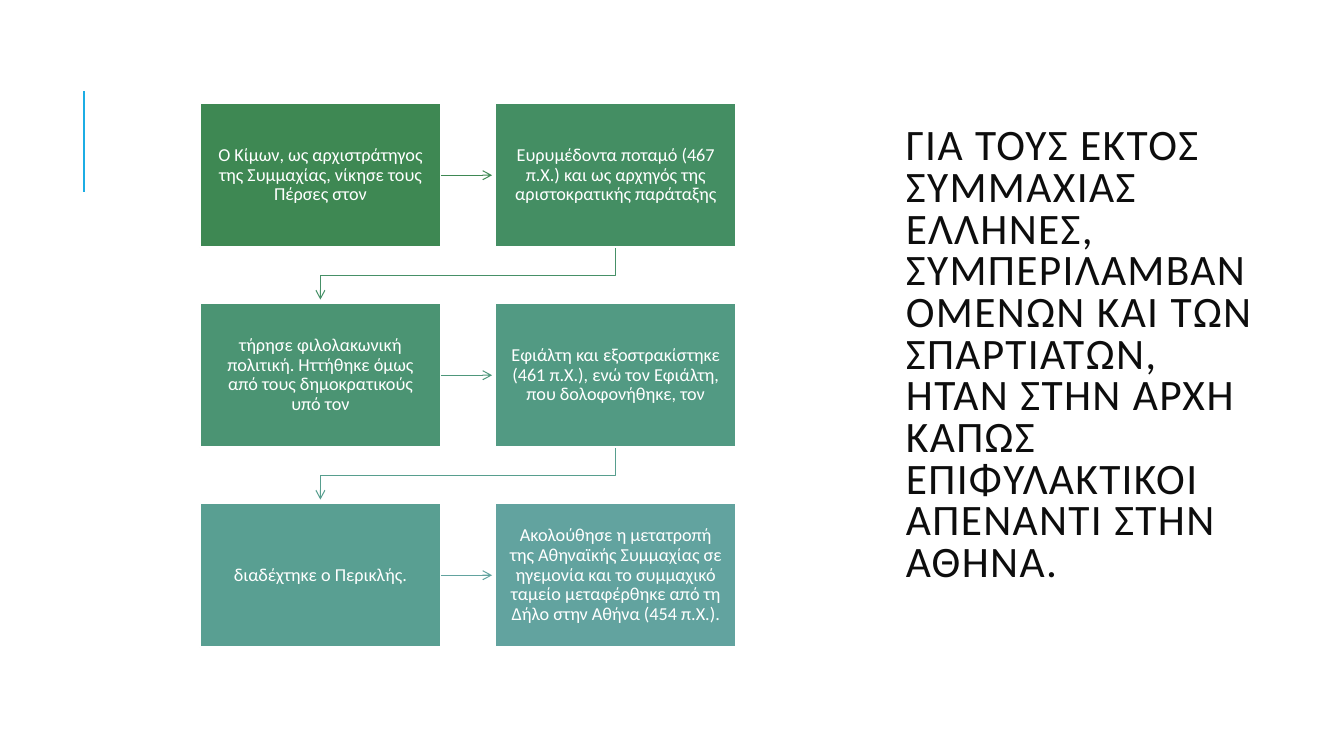
from lxml import etree
from pptx import Presentation
from pptx.dml.color import RGBColor
from pptx.enum.shapes import MSO_CONNECTOR, MSO_SHAPE
from pptx.enum.text import MSO_ANCHOR, MSO_AUTO_SIZE, PP_ALIGN
from pptx.oxml.ns import qn
from pptx.util import Cm, Pt

STRAIGHT = MSO_CONNECTOR.STRAIGHT
RECTANGLE = MSO_SHAPE.RECTANGLE
MIDDLE = MSO_ANCHOR.MIDDLE
NO_FIT = MSO_AUTO_SIZE.NONE
LEFT, CENTER = PP_ALIGN.LEFT, PP_ALIGN.CENTER
RIGHT_SIDE = 3

TITLE = (
    "ΓΙΑ ΤΟΥΣ ΕΚΤΌΣ ΣΥΜΜΑΧΊΑΣ ΈΛΛΗΝΕΣ, ΣΥΜΠΕΡΙΛΑΜΒΑΝΟΜΈΝΩΝ ΚΑΙ ΤΩΝ\v"
    "ΣΠΑΡΤΙΑΤΏΝ, ΉΤΑΝ ΣΤΗΝ ΑΡΧΉ ΚΆΠΩΣ ΕΠΙΦΥΛΑΚΤΙΚΟΊ ΑΠΈΝΑΝΤΙ ΣΤΗΝ ΑΘΉΝΑ."
)
# Each step: text, fill, colour of the arrow to the next step
STEPS = [
    ("Ο Κίμων, ως αρχιστράτηγος της Συμμαχίας, νίκησε τους Πέρσες στον",
     "3E8853", "3E8853"),
    ("Ευρυμέδοντα ποταμό (467 π.Χ.) και ως αρχηγός της αριστοκρατικής παράταξης",
     "448E63", "469067"),
    ("τήρησε φιλολακωνική πολιτική. Ηττήθηκε όμως από τους δημοκρατικούς υπό τον",
     "4B9473", "4E977B"),
    ("Εφιάλτη και εξοστρακίστηκε (461 π.Χ.), ενώ τον Εφιάλτη, που δολοφονήθηκε, τον",
     "529A83", "579E8E"),
    ("διαδέχτηκε ο Περικλής.", "599F92", "62A39F"),
    ("Ακολούθησε η μετατροπή της Αθηναϊκής Συμμαχίας σε ηγεμονία και το "
     "συμμαχικό ταμείο μεταφέρθηκε από τη Δήλο στην Αθήνα (454 π.Χ.).",
     "62A39F", None),
]


def color(value):
    return RGBColor.from_string(value)


def apply_format(target, values):
    for name, value in values.items():
        setattr(target, name, value)


def style_line(shape, value, width, arrow=False):
    shape.line.color.rgb = color(value)
    shape.line.width = Pt(width)
    if arrow:
        etree.SubElement(shape.line._get_or_add_ln(), qn("a:tailEnd"), type="arrow")


def add_straight(page, start, end, value, width, arrow=False):
    connector = page.shapes.add_connector(STRAIGHT, *start, *end)
    style_line(connector, value, width, arrow)
    etree.SubElement(connector._element.spPr, qn("a:effectLst"))
    return connector


def format_text(frame, frame_values, para_values, size, value):
    apply_format(frame, {"word_wrap": True, "auto_size": NO_FIT,
                         "vertical_anchor": MIDDLE, **frame_values})
    para = frame.paragraphs[0]
    apply_format(para, para_values)
    for span in para.runs:
        apply_format(span.font, {"name": "Calibri", "size": Pt(size)})
        span.font.color.rgb = color(value)
    return para


def add_title(page, left, top, width, height):
    title = page.shapes.title
    apply_format(title, {"left": left, "top": top, "width": width, "height": height})
    title.text_frame.text = TITLE
    # The deeper bottom margin lifts the centred text by half a line
    margins = {"margin_left": Cm(0.25), "margin_right": Cm(0.25),
               "margin_top": Cm(0.13), "margin_bottom": Cm(1.18)}
    para = format_text(title.text_frame, margins,
                       {"alignment": LEFT, "line_spacing": 0.8}, 31, "0D0D0D")
    for span in para.runs:
        apply_format(span.font, {"bold": False})
        properties = span.font._element
        for name, value in {"lang": "el-GR", "cap": "all", "spc": "100"}.items():
            properties.set(name, value)


def add_step(page, left, top, width, height, text, fill):
    box = page.shapes.add_shape(RECTANGLE, left, top, width, height)
    box.shadow.inherit = False
    box.fill.solid()
    box.fill.fore_color.rgb = color(fill)
    style_line(box, "FFFFFF", 1.25)
    box.text_frame.text = text
    margins = {f"margin_{side}": Cm(0.3) for side in ("left", "top", "right", "bottom")}
    format_text(box.text_frame, margins,
                {"alignment": CENTER, "line_spacing": 0.9}, 13, "FFFFFF")
    return box


def add_elbow(page, box, following, value):
    # Down from one row, across, and down into the next row
    start_x = box.left + box.width // 2
    end_x = following.left + following.width // 2
    start_y = box.top + box.height + Cm(0.03)
    middle_y = (box.top + box.height + following.top) // 2
    builder = page.shapes.build_freeform(start_x, start_y)
    builder.add_line_segments(
        [(start_x, middle_y), (end_x, middle_y), (end_x, following.top - Cm(0.09))],
        close=False)
    elbow = builder.convert_to_shape()
    elbow.shadow.inherit = False
    elbow.fill.background()
    style_line(elbow, value, 0.75, arrow=True)


def add_flow(page, left, top, width, height):
    box_width, box_height = Cm(6.07), Cm(3.63)
    step_x, step_y = width - box_width, (height - box_height) // 2
    boxes = []
    for index, (text, fill, _) in enumerate(STEPS):
        row, column = divmod(index, 2)
        boxes.append(add_step(page, left + column * step_x, top + row * step_y,
                              box_width, box_height, text, fill))
    # Arrows from each step to the next
    for index, (box, following) in enumerate(zip(boxes, boxes[1:])):
        value = STEPS[index][2]
        if index % 2:
            add_elbow(page, box, following, value)
        else:
            y = box.top + box.height // 2
            arrow = add_straight(page, (box.left + box.width, y),
                                 (following.left - Cm(0.08), y), value, 0.75, True)
            arrow.begin_connect(box, RIGHT_SIDE)


def main():
    deck = Presentation()
    apply_format(deck, {"slide_width": Cm(33.87), "slide_height": Cm(19.05)})
    page = deck.slides.add_slide(deck.slide_layouts[5])
    # Accent line
    add_straight(page, (Cm(2.12), Cm(4.83)), (Cm(2.12), Cm(2.29)), "1CADE4", 1.5)
    add_title(page, Cm(22.58), Cm(1.78), Cm(9.65), Cm(15.47))
    add_flow(page, Cm(5.04), Cm(2.6), Cm(13.51), Cm(13.71))
    deck.save("out.pptx")


if __name__ == "__main__":
    main()
